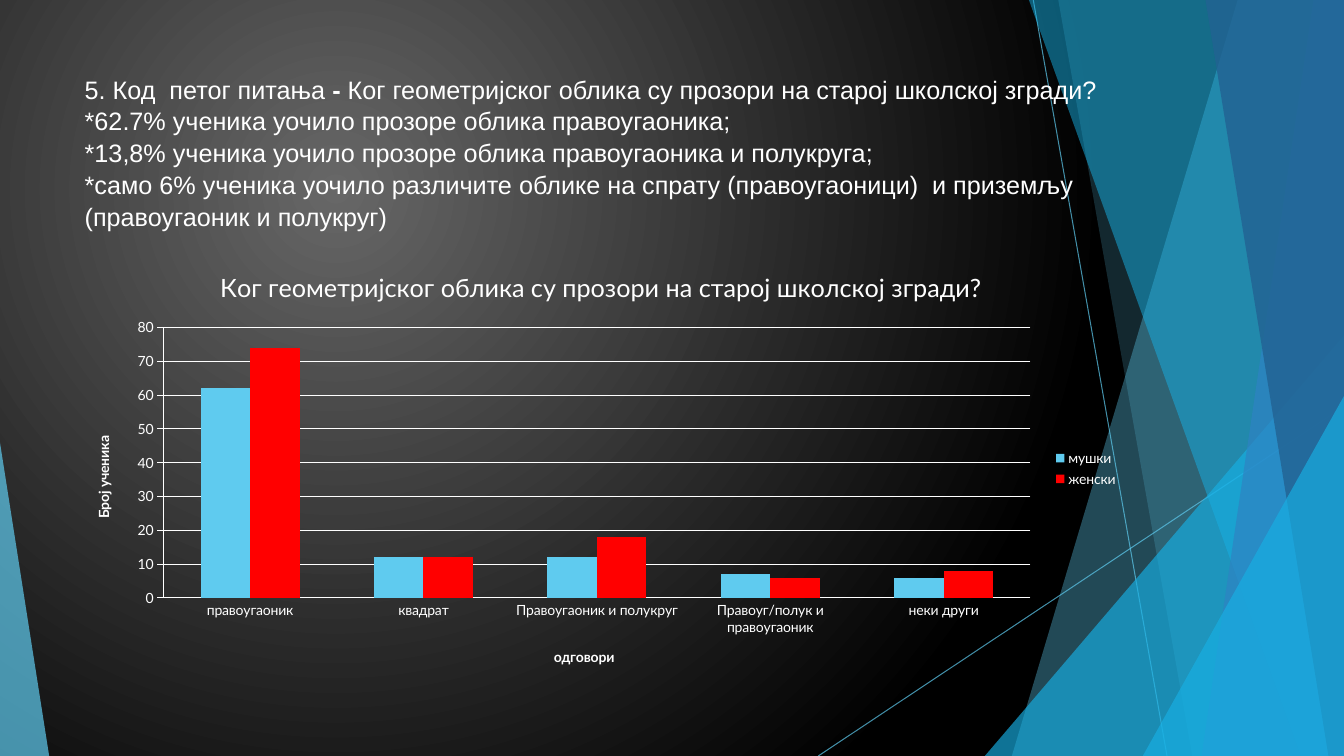
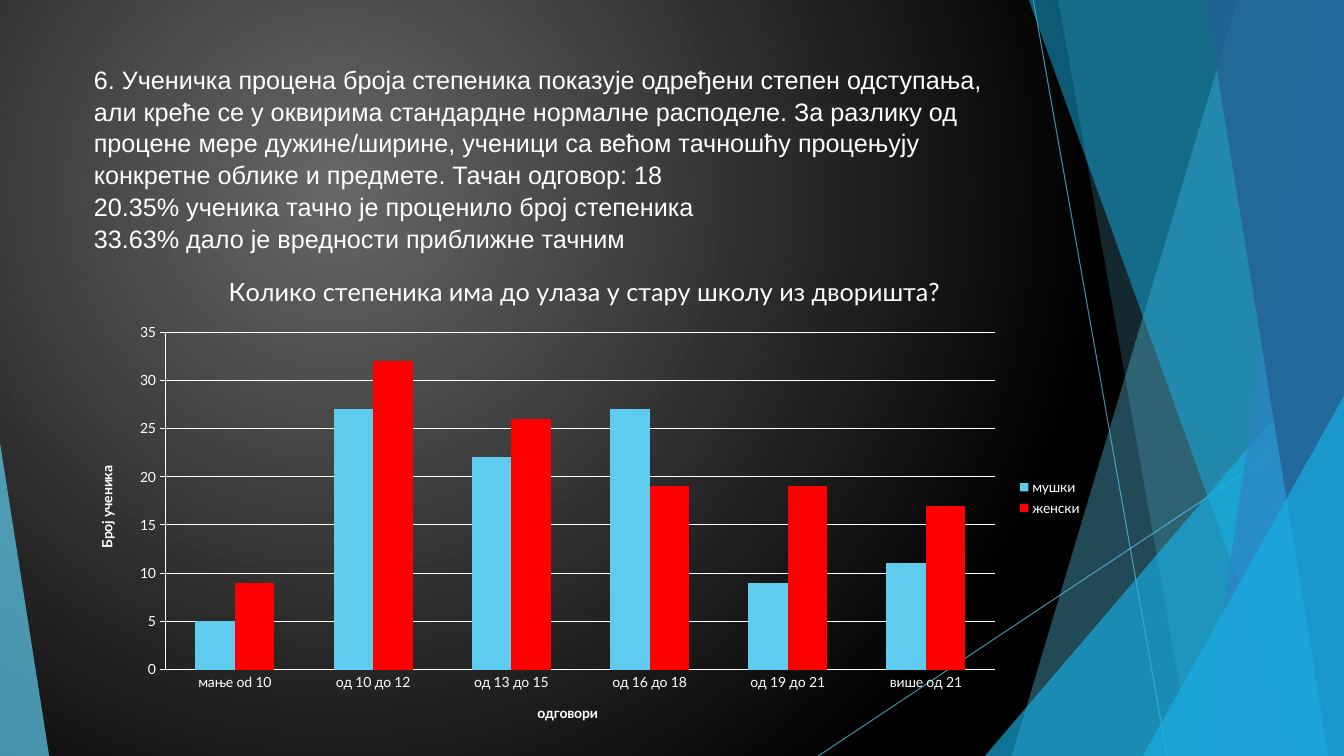
from lxml import etree
from pptx import Presentation
from pptx import util as u
from pptx.chart.data import CategoryChartData
from pptx.dml.color import RGBColor
from pptx.enum import chart as ch, shapes, text
from pptx.oxml.ns import qn

Cm, Pt = u.Cm, u.Pt
WIDTH, HEIGHT = 33.87, 19.05

WHITE = RGBColor(0xFF, 0xFF, 0xFF)
BLACK = RGBColor(0, 0, 0)
GREY = RGBColor(0x67, 0x67, 0x67)
SKY = RGBColor(0x5F, 0xCB, 0xEF)
CYAN = RGBColor(0x17, 0xB0, 0xE4)
BLUE = RGBColor(0x2E, 0x83, 0xC3)
NAVY = RGBColor(0x22, 0x62, 0x92)
RED = RGBColor(0xFF, 0, 0)
TITLE_FONT, CHART_FONT = "Arial", "Lato"

# x1, y1, x2, y2 in cm
RAYS = [(26.04, 0, 29.41, HEIGHT), (WIDTH, 10.24, 20.62, HEIGHT)]

# Back to front. A band runs from top x and bottom x to the right edge;
# a triangle stands on the bottom edge: left, top, width, apex.
DECOR = [
    ("band", (31.19, 25.5), SKY, 36),
    ("band", (26.67, 30.05), SKY, 20),
    ("triangle", (24.82, 8.46, 9.05, 1), CYAN, 66),
    ("band", (25.93, 32.79), CYAN, 50),
    ("band", (33.1, 30.28), BLUE, 70),
    ("band", (30.38, 33.48), NAVY, 80),
    ("triangle", (28.8, 9.98, 5.07, 1), CYAN, 66),
    ("triangle", (0, 11.15, 1.24, 0), SKY, 70),
]

SERIES = [("мушки", SKY), ("женски", RED)]
X_TITLE, Y_TITLE = "одговори", "Број ученика"

# Title lines are lists of (text, bold) runs; boxes are left, top, width, height in cm
SLIDES = [
    {
        "title_box": (1.88, 1.7, 27.64, 3.94),
        "title": [
            [("5. Код  петог питања ", False), ("- ", True),
             ("Ког геометријског облика су прозори на старој школској згради?", False)],
            [("*62.7% ученика уочило прозоре облика правоугаоника;", False)],
            [("*13,8% ученика уочило прозоре облика правоугаоника и полукруга;", False)],
            [("*само 6% ученика уочило различите облике на спрату (правоугаоници)  "
              "и приземљу (правоугаоник и полукруг)", False)],
        ],
        "chart_box": (1.85, 6.32, 26.59, 10.97),
        "chart_title": "Ког геометријског облика су прозори на старој школској згради?",
        "categories": ["правоугаоник", "квадрат", "Правоугаоник и полукруг",
                       "Правоуг/полук и правоугаоник", "неки други"],
        "values": [(62, 12, 12, 7, 6), (74, 12, 18, 6, 8)],
        "scale": (80, 10),
    },
    {
        "title_box": (2.11, 1.45, 23.88, 3.66),
        "title": [
            [("6. Ученичка процена броја степеника показује одређени степен одступања, "
              "али креће се у оквирима стандардне нормалне расподеле. За разлику од "
              "процене мере дужине/ширине, ученици са већом тачношћу процењују "
              "конкретне облике и предмете. Тачан одговор: 18", False)],
            [("20.35% ученика тачно је проценило број степеника", False)],
            [("33.63% дало је вредности приближне тачним", False)],
        ],
        "chart_box": (1.93, 6.38, 25.6, 12.32),
        "chart_title": "Колико степеника има до улаза у стару школу из дворишта?",
        "categories": ["мање od 10", "од 10 до 12", "од 13 до 15",
                       "од 16 до 18", "од 19 до 21", "више од 21"],
        "values": [(5, 27, 22, 27, 9, 11), (9, 32, 26, 19, 19, 17)],
        "scale": (35, 5),
    },
]


def cms(values):
    return [Cm(v) for v in values]


def set_alpha(sp, percent):
    for clr in sp.element.xpath("./p:spPr//a:srgbClr"):
        etree.SubElement(clr, qn("a:alpha")).set("val", str(percent * 1000))


def set_background(layout):
    fill = layout.background.fill
    fill.gradient()
    for stop, color in zip(fill.gradient_stops, (GREY, BLACK)):
        stop.color.rgb = color
    lin = layout.element.xpath(".//p:bg//a:lin")[0]
    path = etree.Element(qn("a:path"), {"path": "circle"})
    etree.SubElement(path, qn("a:fillToRect"),
                     {"l": "50000", "t": "50000", "r": "100000", "b": "100000"})
    lin.getparent().replace(lin, path)


def add_ray(slide, ends):
    ray = slide.shapes.add_connector(shapes.MSO_CONNECTOR.STRAIGHT, *cms(ends))
    ray.line.color.rgb = SKY
    ray.line.width = Pt(0.75)
    set_alpha(ray, 70)
    etree.SubElement(ray.element.spPr, qn("a:effectLst"))
    return ray


def add_decor(slide, kind, geometry, color, alpha):
    if kind == "band":
        top_x, bottom_x = geometry
        outline = slide.shapes.build_freeform(Cm(top_x), 0)
        corners = [(WIDTH, 0), (WIDTH, HEIGHT), (bottom_x, HEIGHT)]
        outline.add_line_segments([cms(c) for c in corners], close=True)
        sp = outline.convert_to_shape()
    else:
        left, top, width, apex = geometry
        sp = slide.shapes.add_shape(shapes.MSO_SHAPE.ISOSCELES_TRIANGLE,
                                    *cms((left, top, width, HEIGHT - top)))
        sp.adjustments[0] = apex
    sp.shadow.inherit = False
    sp.fill.solid()
    sp.fill.fore_color.rgb = color
    sp.line.fill.background()
    set_alpha(sp, alpha)
    return sp


def decorate_layout(layout, slide):
    """Draw the decoration on a slide, then move it behind the layout's placeholders."""
    decor = [add_ray(slide, ends) for ends in RAYS]
    decor += [add_decor(slide, *item) for item in DECOR]
    for i, sp in enumerate(decor):
        sp.element.xpath(".//p:cNvPr")[0].set("id", str(100 + i))
        layout.shapes.element.insert(2 + i, sp.element)


def fill_title(slide, box, lines):
    title = slide.shapes.title
    title.left, title.top, title.width, title.height = cms(box)
    tf = title.text_frame
    tf.word_wrap = True
    tf.auto_size = text.MSO_AUTO_SIZE.NONE
    tf.vertical_anchor = text.MSO_ANCHOR.TOP
    p = tf.paragraphs[0]
    p.alignment = text.PP_ALIGN.LEFT
    p.line_spacing = 1.05
    for i, runs in enumerate(lines):
        if i:
            p.add_line_break()
        for words, bold in runs:
            r = p.add_run()
            r.text = words
            style_font(r.font, TITLE_FONT, 18, bold)


def style_font(font, name, size, bold=False):
    font.name = name
    font.size = Pt(size)
    font.bold = bold
    font.color.rgb = WHITE


def label(owner, words, size, bold):
    """Give a chart or an axis its title."""
    owner.has_title = True
    r = owner.chart_title if hasattr(owner, "chart_title") else owner.axis_title
    r = r.text_frame.paragraphs[0].add_run()
    r.text = words
    style_font(r.font, CHART_FONT, size, bold)


def white_line(line):
    line.color.rgb = WHITE
    line.width = Pt(0.75)


def add_column_chart(slide, content):
    data = CategoryChartData()
    data.categories = content["categories"]
    for (name, _), values in zip(SERIES, content["values"]):
        data.add_series(name, values)
    chart = slide.shapes.add_chart(ch.XL_CHART_TYPE.COLUMN_CLUSTERED,
                                   *cms(content["chart_box"]), data).chart
    style_font(chart.font, CHART_FONT, 10)
    label(chart, content["chart_title"], 18, False)
    chart.chart_title.include_in_layout = False

    chart.has_legend = True
    chart.legend.position = ch.XL_LEGEND_POSITION.RIGHT
    chart.legend.include_in_layout = False

    plot = chart.plots[0]
    plot.gap_width = 150
    plot.overlap = 0
    plot.vary_by_categories = False
    for series, (_, color) in zip(plot.series, SERIES):
        series.format.fill.solid()
        series.format.fill.fore_color.rgb = color
        series.invert_if_negative = False

    x_axis, y_axis = chart.category_axis, chart.value_axis
    for axis, words, tick in ((x_axis, X_TITLE, ch.XL_TICK_MARK.NONE),
                              (y_axis, Y_TITLE, ch.XL_TICK_MARK.OUTSIDE)):
        label(axis, words, 10, True)
        axis.major_tick_mark = tick
        axis.minor_tick_mark = ch.XL_TICK_MARK.NONE
        white_line(axis.format.line)
    y_axis.minimum_scale = 0
    y_axis.maximum_scale, y_axis.major_unit = content["scale"]
    y_axis.has_major_gridlines = True
    white_line(y_axis.major_gridlines.format.line)


def main():
    prs = Presentation()
    prs.slide_width, prs.slide_height = cms((WIDTH, HEIGHT))
    layout = prs.slide_layouts.get_by_name("Title Only")
    set_background(layout)
    for i, content in enumerate(SLIDES):
        slide = prs.slides.add_slide(layout)
        if i == 0:
            decorate_layout(layout, slide)
        fill_title(slide, content["title_box"], content["title"])
        add_column_chart(slide, content)
    prs.save("out.pptx")


if __name__ == "__main__":
    main()
